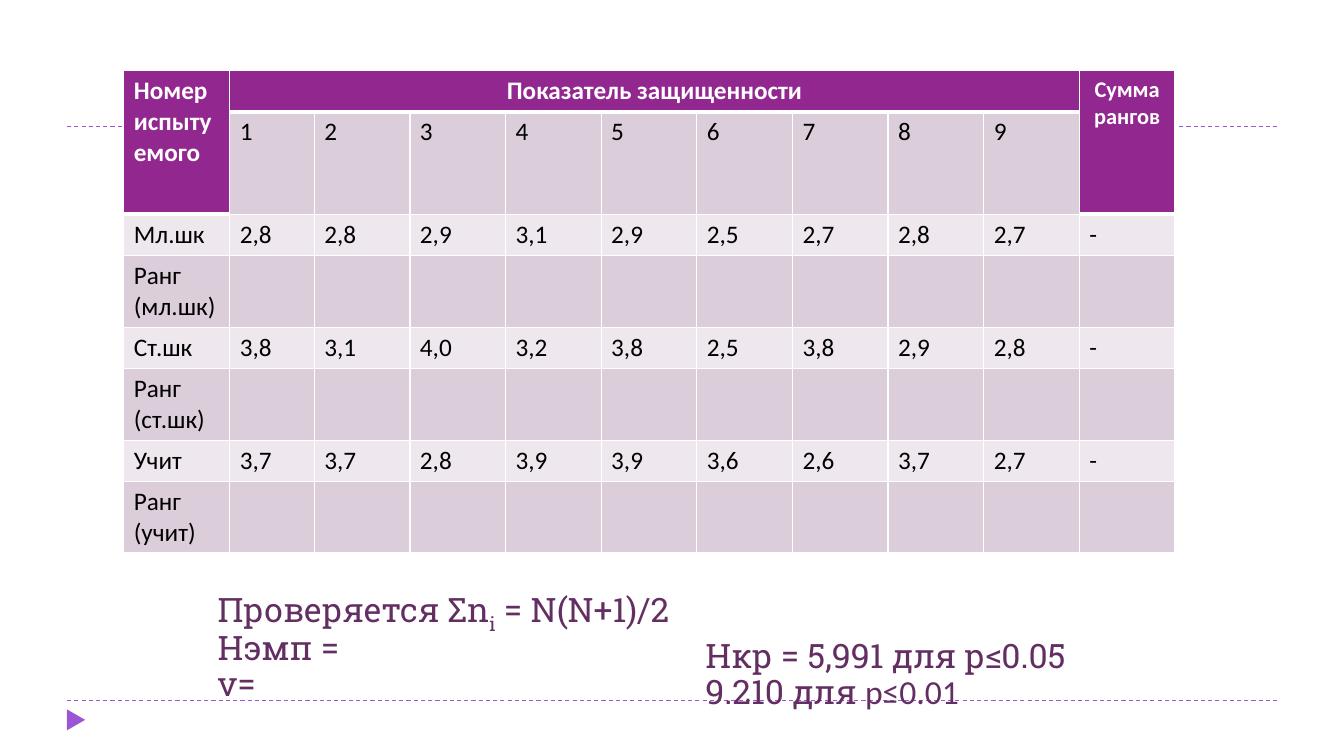
from copy import deepcopy
from dataclasses import dataclass

from lxml.etree import SubElement
from pptx import Presentation
from pptx.dml.color import RGBColor
from pptx.enum.dml import MSO_LINE_DASH_STYLE as Dash
from pptx.enum.shapes import MSO_CONNECTOR as Connector, MSO_SHAPE as Shape
from pptx.enum.text import MSO_ANCHOR as Anchor, MSO_AUTO_SIZE as AutoSize, PP_ALIGN as Align
from pptx.oxml.ns import qn
from pptx.util import Cm, Pt

COLORS = {
    "accent": "9B57D3",
    "text": "632E62",
    "header": "92278F",
    "band_dark": "DCCDDB",
    "band_light": "EEE8EE",
    "white": "FFFFFF",
    "black": "000000",
}
TABLE_FONT = "Calibri"
FORMULA_FONT = "Roboto Slab"
LAST_COLUMN = 10
COLUMN_WIDTHS = [2.67, 2.13] + [2.41] * 9
ROW_HEIGHTS = [1.04, 2.57] + [1.04, 1.8] * 3


@dataclass
class Group:
    name: str
    rank_label: str
    scores: str


@dataclass
class Piece:
    text: str
    font: str = FORMULA_FONT
    subscript: bool = False


GROUPS = [
    Group("Мл.шк", "Ранг (мл.шк)", "2,8 2,8 2,9 3,1 2,9 2,5 2,7 2,8 2,7"),
    Group("Ст.шк", "Ранг (ст.шк)", "3,8 3,1 4,0 3,2 3,8 2,5 3,8 2,9 2,8"),
    Group("Учит", "Ранг (учит)", "3,7 3,7 2,8 3,9 3,9 3,6 2,6 3,7 2,7"),
]
CHECK_LINES = [
    [Piece("Проверяется Σn"), Piece("i", subscript=True), Piece(" = N(N+1)/2")],
    [Piece("Нэмп = ")],
    [Piece("v=")],
]
CRITICAL_LINES = [
    [Piece("Hкр = 5,991 для p≤0.05")],
    [Piece("9.210 для "), Piece("p≤0.01", font=TABLE_FONT)],
]


def color(name: str) -> RGBColor:
    return RGBColor.from_string(COLORS[name])


def add_run(paragraph, text: str, *, font: str, size: float, fill: str, bold: bool = False):
    run = paragraph.add_run()
    run.text = text
    run.font.name = font
    run.font.size = Pt(size)
    run.font.bold = bold
    run.font.color.rgb = color(fill)
    return run


def add_pieces(paragraph, pieces: list[Piece]):
    for piece in pieces:
        run = add_run(paragraph, piece.text, font=piece.font, size=24, fill="text")
        if piece.subscript:
            run.font._element.set("baseline", "-25000")
    return run


def format_formula_box(shape, left: float, top: float) -> None:
    shape.left, shape.top, shape.width, shape.height = Cm(left), Cm(top), Cm(12.12), Cm(3.38)
    frame = shape.text_frame
    frame.word_wrap = True
    frame.auto_size = AutoSize.NONE
    frame.vertical_anchor = Anchor.BOTTOM


def format_formula_paragraph(paragraph) -> None:
    paragraph.alignment = Align.LEFT
    paragraph.line_spacing = 0.9
    paragraph.space_before = Pt(0)


def add_decoration(slide) -> None:
    for y in (17.65, 3.18):
        line = slide.shapes.add_connector(Connector.STRAIGHT, Cm(1.69), Cm(y), Cm(32.17), Cm(y))
        line.line.color.rgb = color("accent")
        line.line.width = Pt(0.75)
        line.line.dash_style = Dash.DASH
        SubElement(line._element.spPr, qn("a:effectLst"))
    marker = slide.shapes.add_shape(Shape.ISOSCELES_TRIANGLE, Cm(1.65), Cm(17.91), Cm(0.53), Cm(0.46))
    marker.rotation = 90
    marker.shadow.inherit = False
    marker.fill.solid()
    marker.fill.fore_color.rgb = color("accent")
    marker.line.fill.background()


def fill_title(slide) -> None:
    """Fill the title and raise it above the dashed lines."""
    title = slide.shapes.title
    slide.shapes._spTree.append(title._element)
    format_formula_box(title, 5.23, 14.48)
    paragraph = title.text_frame.paragraphs[0]
    format_formula_paragraph(paragraph)
    for index, pieces in enumerate(CHECK_LINES):
        run = add_pieces(paragraph, pieces)
        if index < len(CHECK_LINES) - 1:
            paragraph.add_line_break()
            paragraph._p[-1].append(deepcopy(run.font._element))


def add_critical_values(slide) -> None:
    box = slide.shapes.add_textbox(0, 0, 0, 0)
    format_formula_box(box, 17.53, 14.68)
    frame = box.text_frame
    for index, pieces in enumerate(CRITICAL_LINES):
        paragraph = frame.add_paragraph() if index else frame.paragraphs[0]
        format_formula_paragraph(paragraph)
        add_pieces(paragraph, pieces)


def is_header(row: int, column: int) -> bool:
    return row == 0 or (row == 1 and column in (0, LAST_COLUMN))


def set_borders(cell, *, top: float, bottom: float) -> None:
    properties = cell._tc.get_or_add_tcPr()
    for side, width in {"L": 1, "R": 1, "T": top, "B": bottom}.items():
        border = SubElement(properties, qn(f"a:ln{side}"), w=str(Pt(width)))
        SubElement(SubElement(border, qn("a:solidFill")), qn("a:srgbClr"), val=COLORS["white"])


def table_rows() -> list[list[str]]:
    blanks = [""] * 9
    rows = [
        ["Номер испытуемого", "Показатель защищенности", *blanks[1:], "Сумма рангов"],
        ["", *map(str, range(1, 10)), ""],
    ]
    for group in GROUPS:
        rows.append([group.name, *group.scores.split(), "-"])
        rows.append([group.rank_label, *blanks, ""])
    return rows


def add_score_table(slide) -> None:
    rows = table_rows()
    frame = slide.shapes.add_table(
        len(rows), LAST_COLUMN + 1, Cm(3.12), Cm(1.78), Cm(sum(COLUMN_WIDTHS)), Cm(sum(ROW_HEIGHTS))
    )
    table = frame.table
    for column, width in zip(table.columns, COLUMN_WIDTHS):
        column.width = Cm(width)
    for row, height in zip(table.rows, ROW_HEIGHTS):
        row.height = Cm(height)
    for row, texts in enumerate(rows):
        for column, text in enumerate(texts):
            cell = table.cell(row, column)
            header = is_header(row, column)
            under_header = row > 0 and is_header(row - 1, column)
            set_borders(cell, top=3 if under_header else 1, bottom=3 if header else 1)
            band = "band_dark" if row % 2 else "band_light"
            cell.fill.solid()
            cell.fill.fore_color.rgb = color("header" if header else band)
            if text:
                paragraph = cell.text_frame.paragraphs[0]
                paragraph.alignment = Align.CENTER if header and column else Align.LEFT
                size = 16 if header and column == LAST_COLUMN else 18
                add_run(paragraph, text, font=TABLE_FONT, size=size,
                        fill="white" if header else "black", bold=header)
    table.cell(0, 1).merge(table.cell(0, LAST_COLUMN - 1))
    for column in (0, LAST_COLUMN):
        table.cell(0, column).merge(table.cell(1, column))


def main() -> None:
    presentation = Presentation()
    presentation.slide_width, presentation.slide_height = Cm(33.87), Cm(19.05)
    slide = presentation.slides.add_slide(presentation.slide_layouts[5])
    add_decoration(slide)
    fill_title(slide)
    add_score_table(slide)
    add_critical_values(slide)
    presentation.save("out.pptx")


if __name__ == "__main__":
    main()
